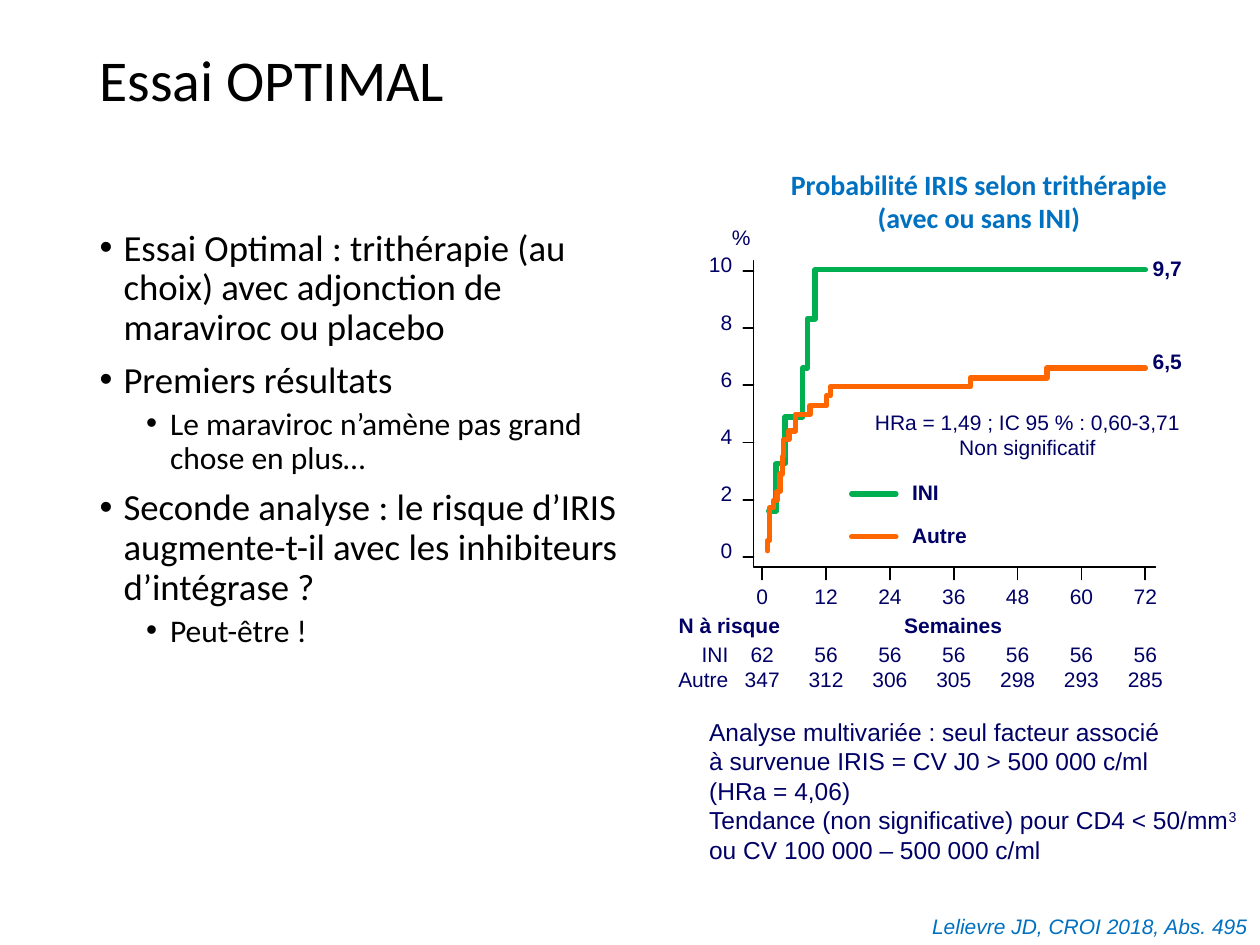
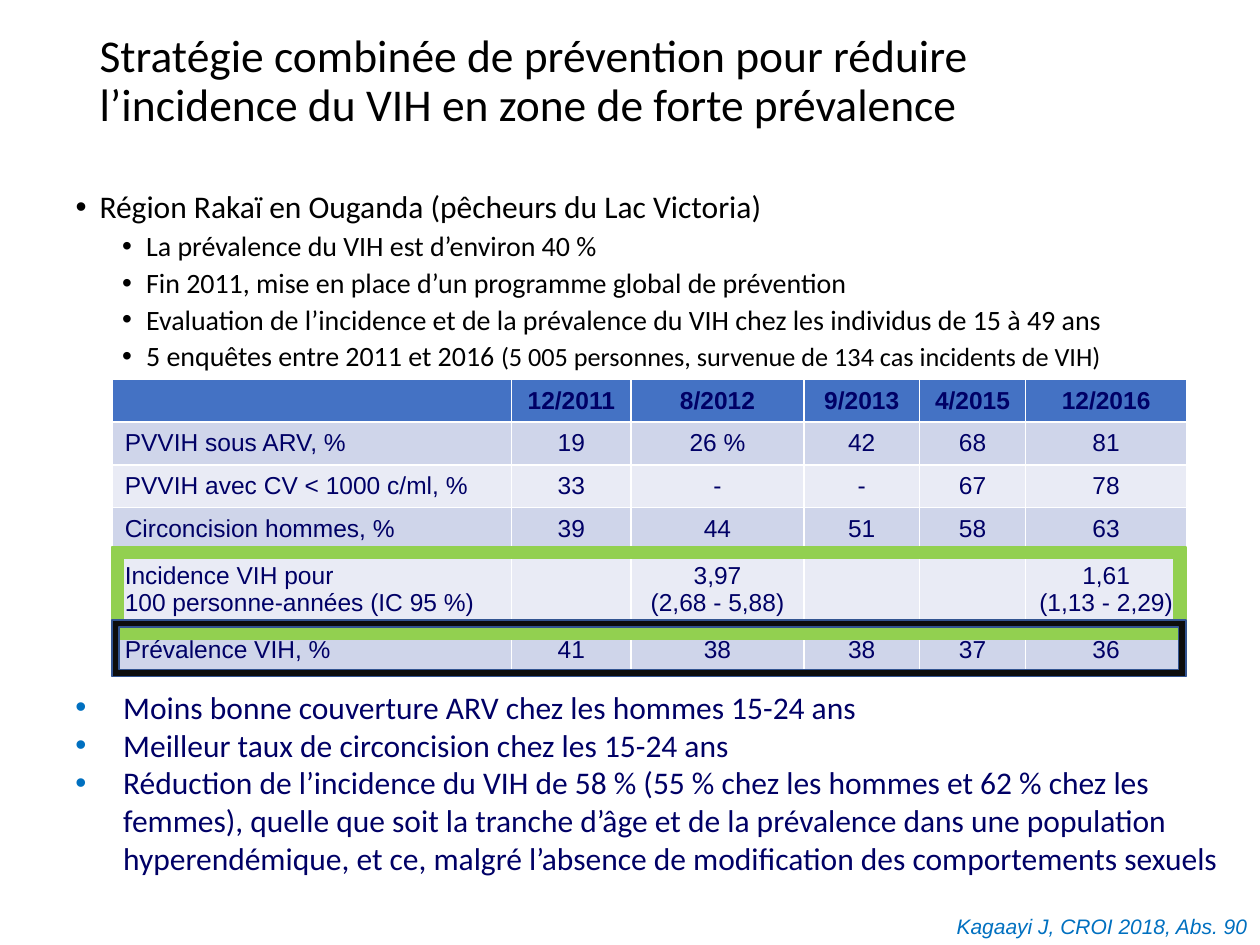
from lxml.etree import SubElement
from pptx import Presentation
from pptx.dml.color import RGBColor
from pptx.enum.shapes import MSO_SHAPE
from pptx.enum.text import MSO_ANCHOR, MSO_AUTO_SIZE, PP_ALIGN
from pptx.oxml.ns import qn
from pptx.util import Inches, Pt

BLACK, NAVY, BLUE = "000000", "000066", "0070C0"
GREEN, ORANGE = "00B050", "FF6600"
HEADER, BAND_DARK, BAND_LIGHT = "4472C4", "CFD5EA", "E9EBF5"
HEADING_FONT, LABEL_FONT = "Calibri", "Arial"
LEFT, CENTER, RIGHT = PP_ALIGN.LEFT, PP_ALIGN.CENTER, PP_ALIGN.RIGHT

TITLE_BOX = (0.69, 0.15, 8.62, 1.01)
LEVEL_INDENT = (0.19, 0.56)
LEVEL_SPACE = (7.5, 3.8)

WEEKS = range(0, 73, 12)
PERCENTS = range(0, 11, 2)
INI_STEPS = [(1.2, 1.6), (2.6, 3.26), (4.3, 4.89), (7.6, 6.6), (8.5, 8.32), (9.9, 10.04)]
OTHER_STEPS = [
    (0.95, 0.22), (0.95, 0.57), (1.4, 1.72), (2.1, 1.98), (2.8, 2.29),
    (3.3, 2.9), (3.8, 3.52), (4, 4.1), (5, 4.4), (6.2, 4.98), (9, 5.29),
    (12.1, 5.64), (12.8, 5.95), (39.1, 6.26), (53.5, 6.6),
]
CURVES = [("INI", GREEN, INI_STEPS, "9,7", 2.13), ("Autre", ORANGE, OTHER_STEPS, "6,5", 2.87)]
AT_RISK = {
    "INI": [62, 56, 56, 56, 56, 56, 56],
    "Autre": [347, 312, 306, 305, 298, 293, 285],
}

COLUMN_WIDTHS = [3.17, 0.95, 1.37, 0.92, 0.84, 1.28]
ROW_HEIGHTS = [0.34, 0.34, 0.34, 0.34, 0.62, 0.34]
SURVEYS = [
    ["", "12/2011", "8/2012", "9/2013", "4/2015", "12/2016"],
    ["PVVIH sous ARV, %", "19", "26 %", "42", "68", "81"],
    ["PVVIH avec CV < 1000 c/ml, %", "33", "-", "-", "67", "78"],
    ["Circoncision hommes, %", "39", "44", "51", "58", "63"],
    ["Incidence VIH pour\n100 personne-années (IC 95 %)", "", "3,97\n(2,68 - 5,88)", "", "",
     "1,61\n(1,13 - 2,29)"],
    ["Prévalence VIH, %", "41", "38", "38", "37", "36"],
]


def color(value):
    return RGBColor.from_string(value)


def inches(values):
    return [Inches(value) for value in values]


def format_run(run, size, ink=NAVY, font=LABEL_FONT, bold=False, italic=False):
    run.font.size = Pt(size)
    run.font.name = font
    run.font.bold = bold
    run.font.italic = italic
    run.font.color.rgb = color(ink)


def set_bullet(paragraph, indent, hanging, bullet_color=None):
    properties = paragraph._p.get_or_add_pPr()
    properties.set("marL", str(Inches(indent)))
    properties.set("indent", str(-Inches(hanging)))
    if bullet_color:
        SubElement(SubElement(properties, qn("a:buClr")), qn("a:srgbClr")).set("val", bullet_color)
    SubElement(properties, qn("a:buFont")).set("typeface", LABEL_FONT)
    SubElement(properties, qn("a:buChar")).set("char", "•")


def add_label(slide, box, lines, align=LEFT, size=12, **style):
    label = slide.shapes.add_textbox(*inches(box))
    frame = label.text_frame
    frame.word_wrap = True
    for index, line in enumerate(lines):
        paragraph = frame.add_paragraph() if index else frame.paragraphs[0]
        paragraph.text = line
        paragraph.alignment = align
        for run in paragraph.runs:
            format_run(run, size, **style)
    return label


def place(shape, box):
    shape.left, shape.top, shape.width, shape.height = inches(box)
    shape.text_frame.auto_size = MSO_AUTO_SIZE.NONE


def add_base_slide(presentation, title, title_size, body_box, items, source):
    slide = presentation.slides.add_slide(presentation.slide_layouts[1])
    heading, body = slide.placeholders
    place(heading, TITLE_BOX)
    heading.text_frame.vertical_anchor = MSO_ANCHOR.MIDDLE
    paragraph = heading.text_frame.paragraphs[0]
    paragraph.text = title
    paragraph.alignment = LEFT
    paragraph.line_spacing = 0.9
    format_run(paragraph.runs[0], title_size, BLACK, HEADING_FONT)

    place(body, body_box)
    for index, (level, *parts) in enumerate(items):
        frame = body.text_frame
        paragraph = frame.add_paragraph() if index else frame.paragraphs[0]
        paragraph.level = level
        paragraph.line_spacing = 0.9
        paragraph.space_before = Pt(LEVEL_SPACE[level])
        set_bullet(paragraph, LEVEL_INDENT[level], LEVEL_INDENT[0])
        for text, size in parts:
            run = paragraph.add_run()
            run.text = text
            format_run(run, size, BLACK, HEADING_FONT)

    add_label(slide, (6.49, 7.2, 3.51, 0.3), [source], RIGHT, ink=BLUE, italic=True)
    return slide


def add_strokes(slide, strokes, ink, width):
    points = [inches(point) for stroke in strokes for point in stroke]
    builder = slide.shapes.build_freeform(*points[0])
    for stroke in strokes:
        start, *rest = [inches(point) for point in stroke]
        builder.move_to(*start)
        builder.add_line_segments(rest, close=False)
    shape = builder.convert_to_shape()
    shape.shadow.inherit = False
    shape.fill.background()
    shape.line.color.rgb = color(ink)
    shape.line.width = Pt(width)
    line = shape._element.spPr.find(qn("a:ln"))
    line.set("cap", "rnd")
    SubElement(line, qn("a:round"))


def add_survival_plot(slide, box):
    left, top, width, height = box
    right, bottom = left + width, top + height

    def week_x(week):
        return left + 0.07 + week * 3.04 / 72

    def percent_y(percent):
        return bottom - 0.08 - percent * 0.227

    axes = [[(right, bottom), (left, bottom), (left, top)]]
    axes += [[(week_x(week), bottom + 0.1), (week_x(week), bottom)] for week in WEEKS]
    axes += [[(left - 0.08, percent_y(percent)), (left, percent_y(percent))] for percent in PERCENTS]
    add_strokes(slide, axes, BLACK, 1)

    for row, (name, ink, steps, final, final_top) in enumerate(CURVES):
        legend_y = top + 1.85 + row * 0.34
        curve = [(week_x(steps[0][0]), percent_y(steps[0][1]))]
        for (_, previous), (week, percent) in zip(steps, steps[1:]):
            curve += [(week_x(week), percent_y(previous)), (week_x(week), percent_y(percent))]
        curve.append((week_x(72), percent_y(steps[-1][1])))
        legend = [(left + 0.78, legend_y), (left + 1.13, legend_y)]
        add_strokes(slide, [legend, curve], ink, 3.13)
        add_label(slide, (left + 1.16, legend_y - 0.16, 0.8, 0.3), [name], bold=True)
        add_label(slide, (right - 0.12, top + final_top - 2.22, 0.6, 0.3), [final], bold=True)

    for percent in PERCENTS:
        add_label(slide, (left - 0.56, percent_y(percent) - 0.2, 0.49, 0.3), [str(percent)], RIGHT)
    add_label(slide, (left - 0.27, top - 0.34, 0.5, 0.3), ["%"])
    add_label(slide, (left + 0.8, top + 1.13, 2.75, 0.5),
              ["HRa = 1,49 ; IC 95 % : 0,60-3,71", "Non significatif"], CENTER)

    for index, week in enumerate(WEEKS):
        x = week_x(week) - 0.3
        add_label(slide, (x, bottom + 0.08, 0.6, 0.3), [str(week)], CENTER)
        counts = [str(values[index]) for values in AT_RISK.values()]
        add_label(slide, (x, bottom + 0.54, 0.6, 0.5), counts, CENTER)
    add_label(slide, (left - 0.8, bottom + 0.54, 0.7, 0.5), list(AT_RISK), RIGHT)
    add_label(slide, (left - 0.81, bottom + 0.31, 1.12, 0.3), ["N à risque"], RIGHT, bold=True)
    add_label(slide, (left + 0.99, bottom + 0.31, 1.19, 0.3), ["Semaines"], CENTER, bold=True)


def add_survey_table(slide, box):
    table = slide.shapes.add_table(len(SURVEYS), len(COLUMN_WIDTHS), *inches(box)).table
    for column, width in zip(table.columns, COLUMN_WIDTHS):
        column.width = Inches(width)
    for row, height in zip(table.rows, ROW_HEIGHTS):
        row.height = Inches(height)
    for row, values in enumerate(SURVEYS):
        fill = HEADER if row == 0 else (BAND_LIGHT, BAND_DARK)[row % 2]
        for column, value in enumerate(values):
            cell = table.cell(row, column)
            cell.fill.solid()
            cell.fill.fore_color.rgb = color(fill)
            cell.vertical_anchor = MSO_ANCHOR.MIDDLE
            cell.text_frame.text = value
            for paragraph in cell.text_frame.paragraphs:
                paragraph.alignment = CENTER if column else LEFT
                paragraph.font.size = Pt(14)
                for run in paragraph.runs:
                    format_run(run, 14, bold=row == 0)


def add_highlight(slide, box, fill, outline):
    frame = slide.shapes.add_shape(MSO_SHAPE.FRAME, *inches(box))
    frame.shadow.inherit = False
    frame.fill.solid()
    frame.fill.fore_color.rgb = color(fill)
    frame.line.color.rgb = color(outline)
    frame.line.width = Pt(1)


def build_optimal_slide(presentation):
    items = [
        (0, ("Essai Optimal : trithérapie (au choix) avec adjonction de maraviroc ou placebo", 21)),
        (0, ("Premiers résultats", 21)),
        (1, ("Le maraviroc n’amène pas grand chose en plus…", 18)),
        (0, ("Seconde analyse : le risque d’IRIS augmente-t-il avec les inhibiteurs d’intégrase ?", 21)),
        (1, ("Peut-être !", 18)),
    ]
    slide = add_base_slide(presentation, "Essai OPTIMAL", 33, (0.69, 1.77, 4.45, 4.99), items,
                           "Lelievre JD, CROI 2018, Abs. 495")
    add_label(slide, (6.02, 1.28, 3.5, 0.64),
              ["Probabilité IRIS selon trithérapie (avec ou sans INI)"],
              CENTER, 16, ink=BLUE, font=HEADING_FONT, bold=True)
    add_survival_plot(slide, (5.98, 2.07, 3.19, 2.43))
    analysis = add_label(slide, (5.53, 5.64, 4.43, 1.28), [
        "Analyse multivariée : seul facteur associé\nà survenue IRIS = CV J0 > 500 000 c/ml\n(HRa = 4,06)",
        "Tendance (non significative) pour CD4 < 50/mm",
    ], size=14)
    trend = analysis.text_frame.paragraphs[1]
    for text, baseline in (("3", "30000"), (" ou CV 100 000 – 500 000 c/ml", "0")):
        run = trend.add_run()
        run.text = text
        format_run(run, 14)
        run._r.get_or_add_rPr().set("baseline", baseline)


def build_prevention_slide(presentation):
    items = [
        (0, ("Région Rakaï en Ouganda (pêcheurs du Lac Victoria)", 18)),
        (1, ("La prévalence du VIH est d’environ 40 %", 16)),
        (1, ("Fin 2011, mise en place d’un programme global de prévention", 16)),
        (1, ("Evaluation de l’incidence et de la prévalence du VIH chez les individus de 15 à 49 ans", 16)),
        (1, ("5 enquêtes entre 2011 et 2016 ", 16),
         ("(5 005 personnes, survenue de 134 cas incidents de VIH)", 15)),
    ]
    title = "Stratégie combinée de prévention pour réduire l’incidence du VIH en zone de forte prévalence"
    slide = add_base_slide(presentation, title, 26, (0.5, 1.47, 9.5, 5.59), items,
                           "Kagaayi J, CROI 2018, Abs. 90")
    add_survey_table(slide, (0.89, 3.01, 8.52, 2.32))
    findings = add_label(slide, (0.5, 5.41, 9.3, 1.38), [
        "Moins bonne couverture ARV chez les hommes 15-24 ans",
        "Meilleur taux de circoncision chez les 15-24 ans",
        "Réduction de l’incidence du VIH de 58 % (55 % chez les hommes et 62 % chez les femmes), "
        "quelle que soit la tranche d’âge et de la prévalence dans une population hyperendémique, "
        "et ce, malgré l’absence de modification des comportements sexuels",
    ], size=18, font=HEADING_FONT)
    for paragraph in findings.text_frame.paragraphs:
        set_bullet(paragraph, 0.38, 0.38, BLUE)
    add_highlight(slide, (0.89, 4.34, 8.52, 0.73), "92D050", "92D050")
    add_highlight(slide, (0.89, 4.92, 8.52, 0.45), "0D0D0D", "325491")


def main():
    presentation = Presentation()
    presentation.slide_width, presentation.slide_height = inches((10, 7.5))
    build_optimal_slide(presentation)
    build_prevention_slide(presentation)
    presentation.save("out.pptx")


if __name__ == "__main__":
    main()
